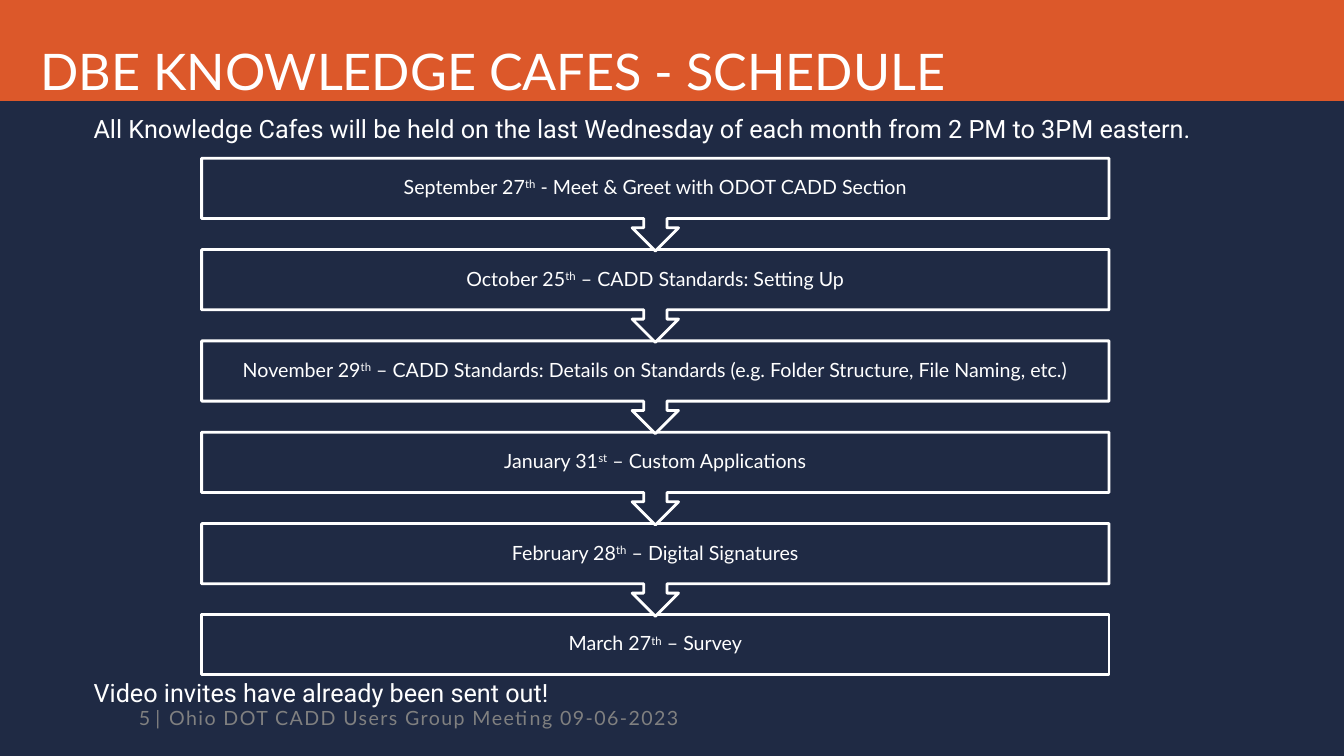
from pptx import Presentation
from pptx.dml.color import RGBColor
from pptx.enum.shapes import MSO_SHAPE
from pptx.enum.text import MSO_ANCHOR, MSO_AUTO_SIZE, PP_ALIGN
from pptx.util import Inches, Pt

RECTANGLE = MSO_SHAPE.RECTANGLE
CALLOUT = MSO_SHAPE.DOWN_ARROW_CALLOUT
TOP, MIDDLE, BOTTOM = MSO_ANCHOR.TOP, MSO_ANCHOR.MIDDLE, MSO_ANCHOR.BOTTOM
LEFT, CENTER, RIGHT = PP_ALIGN.LEFT, PP_ALIGN.CENTER, PP_ALIGN.RIGHT

COLORS = {"navy": "1F2A44", "orange": "DC582A", "white": "FFFFFF", "gray": "808080"}
HEADING_FONT, NOTE_FONT = "Lato", "Roboto"

SESSIONS = [
    ("September 27", "th", " - Meet & Greet with ODOT CADD Section"),
    ("October 25", "th", " – CADD Standards: Setting Up"),
    ("November 29", "th", " – CADD Standards: Details on Standards "
                          "(e.g. Folder Structure, File Naming, etc.)"),
    ("January 31", "st", " – Custom Applications"),
    ("February 28", "th", " – Digital Signatures"),
    ("March 27", "th", " – Survey"),
]
FIRST_TOP, LAST_TOP = 1.57, 6.1
BOX_HEIGHT, CALLOUT_HEIGHT = 0.59, 0.92


def color(name):
    return RGBColor.from_string(COLORS[name])


class SchedulePage:
    def __init__(self, deck):
        self.page = deck.slides.add_slide(deck.slide_layouts[5])
        self.page.background.fill.solid()
        self.page.background.fill.fore_color.rgb = color("navy")

    def format_text(self, shape, size, tone="white", font=HEADING_FONT, align=LEFT,
                    anchor=TOP, insets=(0.1, 0.05, 0.1, 0.05), wrap=True, line_spacing=1.0):
        """Style a one-paragraph shape; insets run left, top, right, bottom."""
        frame = shape.text_frame
        frame.auto_size = MSO_AUTO_SIZE.NONE
        frame.word_wrap = wrap
        frame.vertical_anchor = anchor
        (frame.margin_left, frame.margin_top,
         frame.margin_right, frame.margin_bottom) = map(Inches, insets)
        para = frame.paragraphs[0]
        para.alignment = align
        para.line_spacing = line_spacing
        para.font.name = font
        para.font.size = Pt(size)
        para.font.color.rgb = color(tone)

    def title(self, text):
        title = self.page.shapes.title
        title.left, title.top, title.width, title.height = map(Inches, (0, 0, 13.33, 1))
        title.fill.solid()
        title.fill.fore_color.rgb = color("orange")
        title.text_frame.text = text
        self.format_text(title, 36, anchor=BOTTOM, insets=(0.4, 0.1, 0.4, 0))

    def text(self, text, bounds, size, **style):
        box = self.page.shapes.add_textbox(*map(Inches, bounds))
        box.text_frame.text = text
        self.format_text(box, size, **style)
        return box

    def note(self, text, bounds):
        self.text(text, bounds, 18, font=NOTE_FONT, line_spacing=0.9)

    def footer(self, number, text):
        self.text(number, (1.07, 6.92, 0.52, 0.4), 14, tone="gray", align=RIGHT,
                  anchor=MIDDLE, insets=(0, 0, 0, 0), wrap=False)
        box = self.text(text, (1.58, 6.92, 8.48, 0.4), 14, tone="gray", anchor=MIDDLE)
        span = box.text_frame.paragraphs[0].runs[0]
        span._r.get_or_add_rPr().set("spc", "100")

    def session(self, kind, top, height, date, ordinal, topic):
        box = self.page.shapes.add_shape(
            kind, Inches(2), Inches(top), Inches(9), Inches(height))
        box.shadow.inherit = False
        box.fill.solid()
        box.fill.fore_color.rgb = color("navy")
        box.line.color.rgb = color("white")
        box.line.width = Pt(2)
        para = box.text_frame.paragraphs[0]
        for part in (date, ordinal, topic):
            span = para.add_run()
            span.text = part
            if part == ordinal:
                span._r.get_or_add_rPr().set("baseline", "30000")
        self.format_text(box, 14, align=CENTER, anchor=MIDDLE,
                         insets=(0.11,) * 4, line_spacing=0.9)

    def schedule(self, sessions):
        """Stack from the bottom up, so each arrow tip lies over the next box."""
        last = len(sessions) - 1
        pitch = (LAST_TOP - FIRST_TOP) / last
        for index in range(last, -1, -1):
            kind, height = (RECTANGLE, BOX_HEIGHT) if index == last else (CALLOUT, CALLOUT_HEIGHT)
            self.session(kind, FIRST_TOP + index * pitch, height, *sessions[index])


def main():
    deck = Presentation()
    deck.slide_width, deck.slide_height = Inches(13.33), Inches(7.5)
    page = SchedulePage(deck)
    page.title("DBE KNOWLEDGE CAFES - SCHEDULE")
    page.footer("5 |", "Ohio DOT CADD Users Group Meeting 09-06-2023")
    page.schedule(SESSIONS)
    page.note("All Knowledge Cafes will be held on the last Wednesday of each month "
              "from 2 PM to 3PM eastern.", (0.83, 1.11, 11.33, 0.37))
    page.note("Video invites have already been sent out!", (0.83, 6.7, 5.08, 0.37))
    deck.save("out.pptx")


if __name__ == "__main__":
    main()
